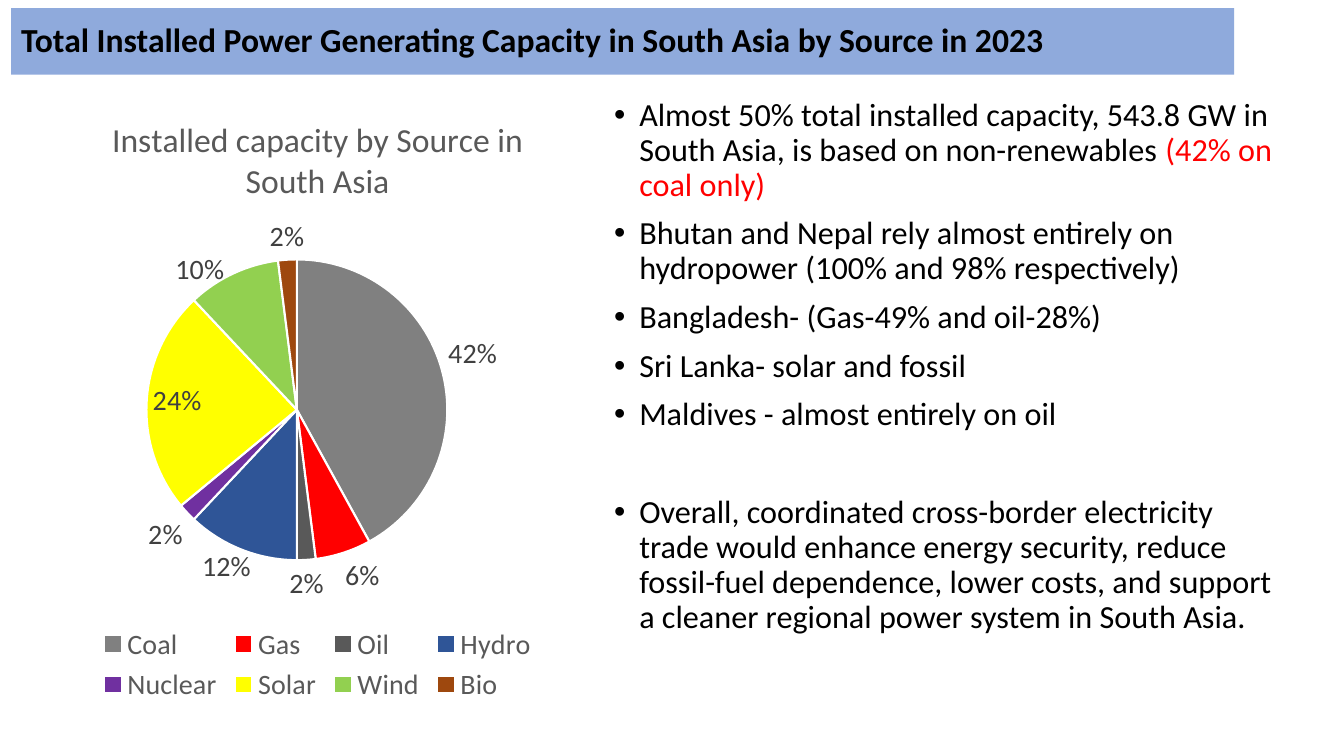
from typing import NamedTuple

from lxml import etree
from pptx import Presentation
from pptx.chart.data import CategoryChartData
from pptx.dml.color import RGBColor
from pptx.enum.chart import XL_CHART_TYPE, XL_LABEL_POSITION, XL_LEGEND_POSITION
from pptx.enum.text import MSO_ANCHOR, MSO_AUTO_SIZE, PP_ALIGN
from pptx.oxml.ns import qn
from pptx.util import Inches, Pt

PIE = XL_CHART_TYPE.PIE
BOTTOM = XL_LEGEND_POSITION.BOTTOM
OUTSIDE = XL_LABEL_POSITION.OUTSIDE_END
INSIDE = XL_LABEL_POSITION.INSIDE_END
FONT = "Calibri"
BLACK, RED, WHITE = "000000", "FF0000", "FFFFFF"
BANNER, GREY, LABEL_GREY = "8FAADC", "595959", "404040"


class Source(NamedTuple):
    name: str
    share: int
    color: str
    label_pos: XL_LABEL_POSITION = OUTSIDE
    shift: tuple[float, float] | None = None


class Bullet(NamedTuple):
    text: str
    highlight: str = ""
    before: float = 10


SOURCES = [
    Source("Coal ", 42, "808080"),
    Source("Gas", 6, RED),
    Source("Oil", 2, "595959"),
    Source("Hydro", 12, "2F5597", shift=(0.02, -0.01)),
    Source("Nuclear", 2, "7030A0"),
    Source("Solar", 24, "FFFF00", INSIDE),
    Source("Wind", 10, "92D050", shift=(-0.01, 0.03)),
    Source("Bio", 2, "9E480E"),
]
BULLETS = [
    Bullet("Almost 50% total installed capacity, 543.8 GW in South Asia, "
           "is based on non-renewables ", "(42% on coal only)", before=0),
    Bullet("Bhutan and Nepal rely almost entirely on hydropower "
           "(100% and 98% respectively)"),
    Bullet("Bangladesh- (Gas-49% and oil-28%)"),
    Bullet("Sri Lanka- solar and fossil"),
    Bullet("Maldives - almost entirely on oil"),
    Bullet("Overall, coordinated cross-border electricity trade would enhance "
           "energy security, reduce fossil-fuel dependence, lower costs, and "
           "support a cleaner regional power system in South Asia.", before=45),
]


def rgb(color: str) -> RGBColor:
    return RGBColor.from_string(color)


def style_font(font, size: float, color: str, bold: bool = False) -> None:
    font.name, font.size, font.bold = FONT, Pt(size), bold
    font.color.rgb = rgb(color)


def add_text(p, text: str, *, size: float = 23, color: str = BLACK,
             bold: bool = False) -> None:
    r = p.add_run()
    r.text = text
    style_font(r.font, size, color, bold)


def place(sp, left: float, top: float, width: float, height: float) -> None:
    sp.left, sp.top = Inches(left), Inches(top)
    sp.width, sp.height = Inches(width), Inches(height)


def set_layout(parent, index: int, **values: float | str) -> None:
    """Give a chart element a manual layout, replacing any present one."""
    for old in parent.findall(qn("c:layout")):
        parent.remove(old)
    layout = etree.Element(qn("c:layout"))
    manual = etree.SubElement(layout, qn("c:manualLayout"))
    for tag, value in values.items():
        etree.SubElement(manual, qn(f"c:{tag}")).set("val", str(value))
    parent.insert(index, layout)


def add_title(slide) -> None:
    sp = slide.shapes.title
    place(sp, 0.11, 0.08, 12.13, 0.66)
    sp.fill.solid()
    sp.fill.fore_color.rgb = rgb(BANNER)
    tf = sp.text_frame
    tf.auto_size = MSO_AUTO_SIZE.NONE
    tf.vertical_anchor = MSO_ANCHOR.MIDDLE
    p = tf.paragraphs[0]
    p.alignment, p.line_spacing = PP_ALIGN.LEFT, 0.9
    add_text(p, "Total Installed Power Generating Capacity in South Asia "
                "by Source in 2023", size=24, bold=True)


def add_bullets(slide) -> None:
    sp = slide.placeholders[1]
    place(sp, 5.99, 0.93, 6.76, 6.21)
    tf = sp.text_frame
    tf.auto_size = MSO_AUTO_SIZE.NONE
    for i, bullet in enumerate(BULLETS):
        p = tf.add_paragraph() if i else tf.paragraphs[0]
        pPr = p._p.get_or_add_pPr()
        pPr.set("marL", str(Inches(0.25)))
        pPr.set("indent", str(-Inches(0.25)))
        etree.SubElement(pPr, qn("a:buFont")).set("typeface", "Arial")
        etree.SubElement(pPr, qn("a:buChar")).set("char", "•")
        p.line_spacing, p.space_before = 0.9, Pt(bullet.before)
        add_text(p, bullet.text)
        if bullet.highlight:
            add_text(p, bullet.highlight, color=RED)


def add_pie(slide) -> None:
    data = CategoryChartData(number_format="0")
    data.categories = [s.name for s in SOURCES]
    data.add_series("Series 1", [s.share for s in SOURCES])
    chart = slide.shapes.add_chart(PIE, Inches(0.22), Inches(0.93), Inches(5.86),
                                   Inches(6.09), data).chart
    style_font(chart.font, 20, BLACK)

    # Title and legend
    chart.has_title = True
    add_text(chart.chart_title.text_frame.paragraphs[0],
             "Installed capacity by Source in South Asia", size=24, color=GREY)
    chart.chart_title.include_in_layout = False
    chart.has_legend = True
    chart.legend.position = BOTTOM
    chart.legend.include_in_layout = False
    style_font(chart.legend.font, 20, GREY)

    # Slices and percentage labels
    plot = chart.plots[0]
    plot.vary_by_categories = True
    series = plot.series[0]
    labels = series.data_labels
    labels.show_value, labels.show_percentage = False, True
    labels.number_format, labels.number_format_is_linked = "0%", False
    labels.position = OUTSIDE
    style_font(labels.font, 20, LABEL_GREY)
    for i, source in enumerate(SOURCES):
        point = series.points[i]
        point.format.fill.solid()
        point.format.fill.fore_color.rgb = rgb(source.color)
        point.format.line.color.rgb = rgb(WHITE)
        point.format.line.width = Pt(1.5)
        if source.shift or source.label_pos != OUTSIDE:
            style_font(point.data_label.font, 20, LABEL_GREY)
            point.data_label.position = source.label_pos
    for label in chart.element.iter(qn("c:dLbl")):
        label.find(qn("c:showVal")).set("val", "0")
        label.find(qn("c:showPercent")).set("val", "1")
        shift = SOURCES[int(label.find(qn("c:idx")).get("val"))].shift
        if shift:
            set_layout(label, 1, x=shift[0], y=shift[1])
    set_layout(next(chart.element.iter(qn("c:plotArea"))), 0, layoutTarget="inner",
               xMode="edge", yMode="edge", x=0.21, y=0.27, w=0.51, h=0.49)


def main() -> None:
    prs = Presentation()
    prs.slide_width, prs.slide_height = Inches(13.33), Inches(7.5)
    slide = prs.slides.add_slide(prs.slide_layouts[1])
    add_title(slide)
    add_bullets(slide)
    add_pie(slide)
    prs.save("out.pptx")


if __name__ == "__main__":
    main()
